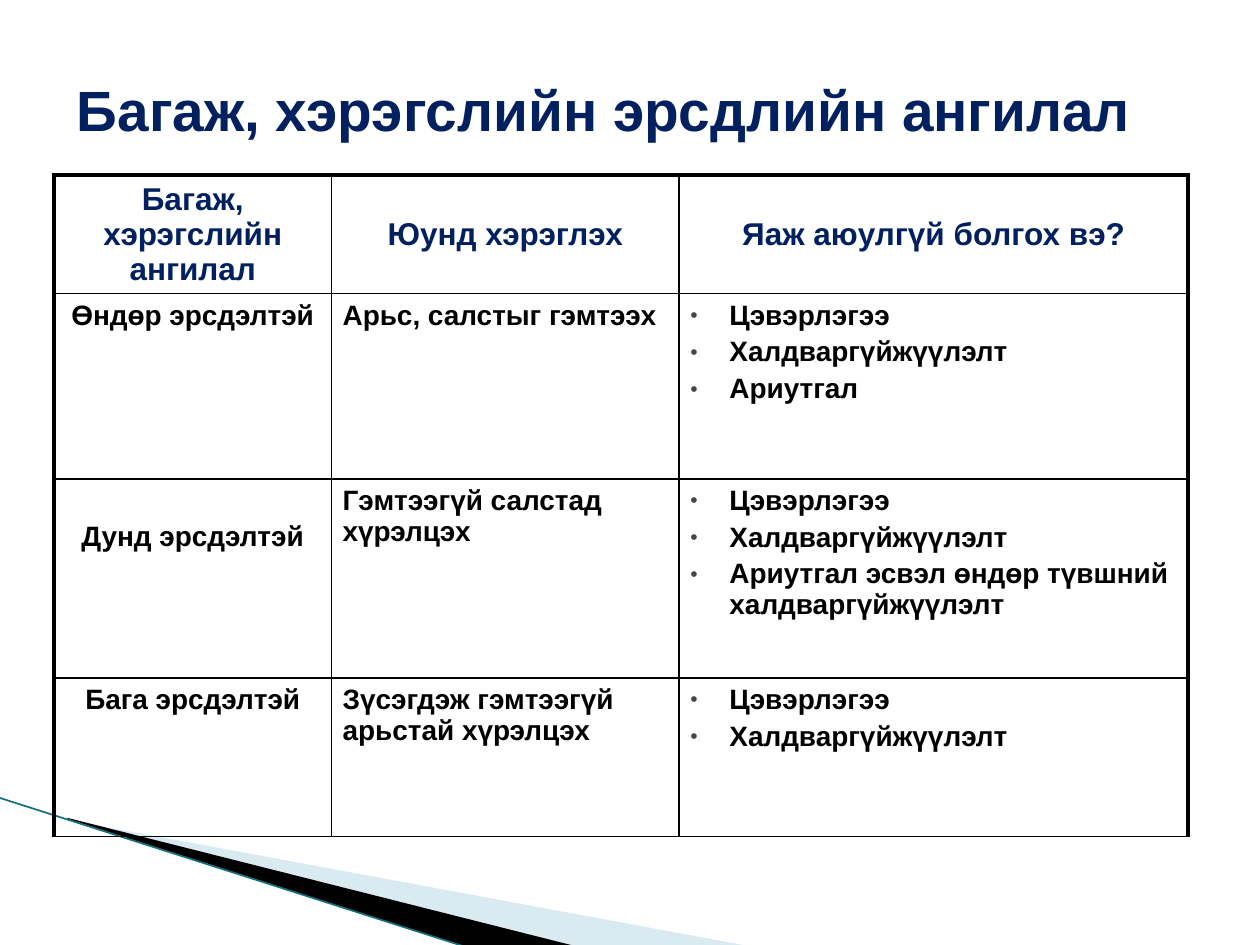
from lxml import etree
from pptx import Presentation
from pptx import util as u
from pptx.dml.color import RGBColor
from pptx.enum import shapes, text
from pptx.oxml import ns

NAVY, BLACK = "002060", "000000"
THIN, THICK = 1, 2.25


def color(hex_code):
    return RGBColor.from_string(hex_code)


def add_element(parent, tag, **attributes):
    return etree.SubElement(parent, ns.qn(tag), attributes)


presentation = Presentation()
presentation.slide_width, presentation.slide_height = u.Inches(10), u.Inches(7.5)
slide = presentation.slides.add_slide(presentation.slide_layouts[5])

# Corner wedges and the line along them
wedges = [
    ([(0.55, 6.51), (5.95, 7.51), (4.56, 7.51), (0.55, 6.5)], "A0CBDC", 40),
    ([(0.53, 6.49), (4.57, 7.51), (3.72, 7.52), (0.54, 6.5)], BLACK, 100),
]
for points, fill, opacity in wedges:
    corners = [(u.Inches(x), u.Inches(y)) for x, y in points]
    builder = slide.shapes.build_freeform(*corners[0])
    builder.add_line_segments(corners[1:], close=True)
    wedge = builder.convert_to_shape()
    wedge.shadow.inherit = False
    wedge.fill.solid()
    wedge.fill.fore_color.rgb = color(fill)
    wedge.line.fill.background()
    if opacity < 100:
        fill_color = wedge.fill._xPr.find(".//" + ns.qn("a:srgbClr"))
        add_element(fill_color, "a:alpha", val=str(opacity * 1000))

edge = slide.shapes.add_connector(
    shapes.MSO_CONNECTOR.STRAIGHT,
    u.Inches(-0.01), u.Inches(6.33), u.Inches(3.71), u.Inches(7.52))
edge.line.color.rgb = color("10707F")
edge.line.width = u.Pt(0.95)
add_element(edge._element.spPr, "a:effectLst")

# Title
title = slide.shapes.title
title.left, title.top = u.Inches(0.51), u.Inches(0.36)
title.width, title.height = u.Inches(9), u.Inches(1.01)
title.text_frame.vertical_anchor = text.MSO_ANCHOR.MIDDLE
title.text_frame.auto_size = text.MSO_AUTO_SIZE.NONE
paragraph = title.text_frame.paragraphs[0]
paragraph.alignment = text.PP_ALIGN.JUSTIFY
run = paragraph.add_run()
run.text = "Багаж, хэрэгслийн эрсдлийн ангилал"
run.font.name, run.font.size, run.font.bold = "Arial", u.Pt(32.4), True
run.font.color.rgb = color(NAVY)

# Risk table: each cell is a list of paragraphs
rows = [
    [["Багаж, хэрэгслийн ангилал"], ["Юунд хэрэглэх"], ["Яаж аюулгүй болгох вэ?"]],
    [["Өндөр эрсдэлтэй"], ["Арьс, салстыг гэмтээх"],
     ["Цэвэрлэгээ", "Халдваргүйжүүлэлт", "Ариутгал"]],
    [["Дунд эрсдэлтэй"], ["Гэмтээгүй салстад хүрэлцэх"],
     ["Цэвэрлэгээ", "Халдваргүйжүүлэлт",
      "Ариутгал эсвэл өндөр түвшний халдваргүйжүүлэлт"]],
    [["Бага эрсдэлтэй"], ["Зүсэгдэж гэмтээгүй арьстай хүрэлцэх"],
     ["Цэвэрлэгээ", "Халдваргүйжүүлэлт"]],
]
column_widths = [2.2, 2.76, 4.04]
row_heights = [0.94, 1.47, 1.58, 1.26]
table = slide.shapes.add_table(
    len(rows), len(column_widths), u.Inches(0.43), u.Inches(1.39),
    u.Inches(sum(column_widths)), u.Inches(sum(row_heights))).table
table.first_row = table.horz_banding = False
for column, width in zip(table.columns, column_widths):
    column.width = u.Inches(width)
for row, height in zip(table.rows, row_heights):
    row.height = u.Inches(height)

for row_index, row in enumerate(rows):
    for column_index, lines in enumerate(row):
        cell = table.cell(row_index, column_index)
        header, first, last = row_index == 0, column_index == 0, column_index == 2
        cell.margin_left = cell.margin_right = u.Inches(0.09)
        cell.margin_top = cell.margin_bottom = u.Inches(0.05)
        if header and not first:
            cell.vertical_anchor = text.MSO_ANCHOR.MIDDLE
        if first and row_index == 2:
            cell.margin_top = u.Inches(0.34)

        borders = {"a:lnL": first, "a:lnR": last, "a:lnT": header, "a:lnB": False}
        for tag, thick in borders.items():
            border = add_element(cell._tc.get_or_add_tcPr(), tag,
                                 w=str(u.Pt(THICK if thick else THIN)))
            add_element(add_element(border, "a:solidFill"), "a:srgbClr", val=BLACK)
        cell.fill.background()

        for line_index, line in enumerate(lines):
            frame = cell.text_frame
            paragraph = frame.add_paragraph() if line_index else frame.paragraphs[0]
            if line_index:
                paragraph.space_before = u.Pt(3.2)
            if header or first:
                paragraph.alignment = text.PP_ALIGN.CENTER
            elif last:
                properties = paragraph._p.get_or_add_pPr()
                properties.set("marL", str(u.Inches(0.31)))
                properties.set("indent", str(u.Inches(-0.31)))
                add_element(add_element(properties, "a:buClr"), "a:srgbClr", val="464646")
                add_element(properties, "a:buSzPct", val="75000")
                add_element(properties, "a:buFont", typeface="Arial")
                add_element(properties, "a:buChar", char="•")
            run = paragraph.add_run()
            run.text = line
            run.font.name, run.font.bold = "Arial", True
            run.font.size = u.Pt(18 if header else 16)
            run.font.color.rgb = color(NAVY if header else BLACK)

presentation.save("out.pptx")
